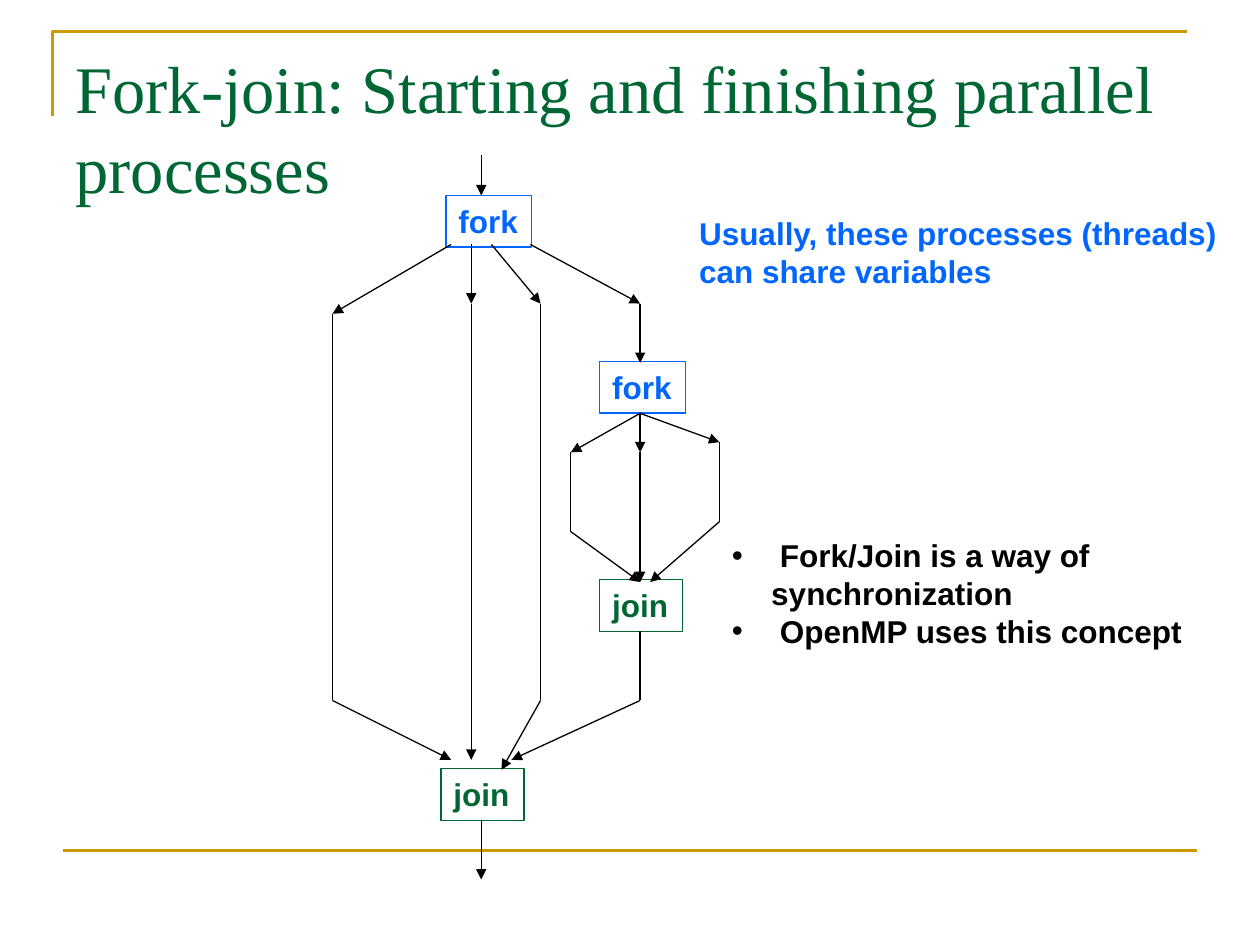
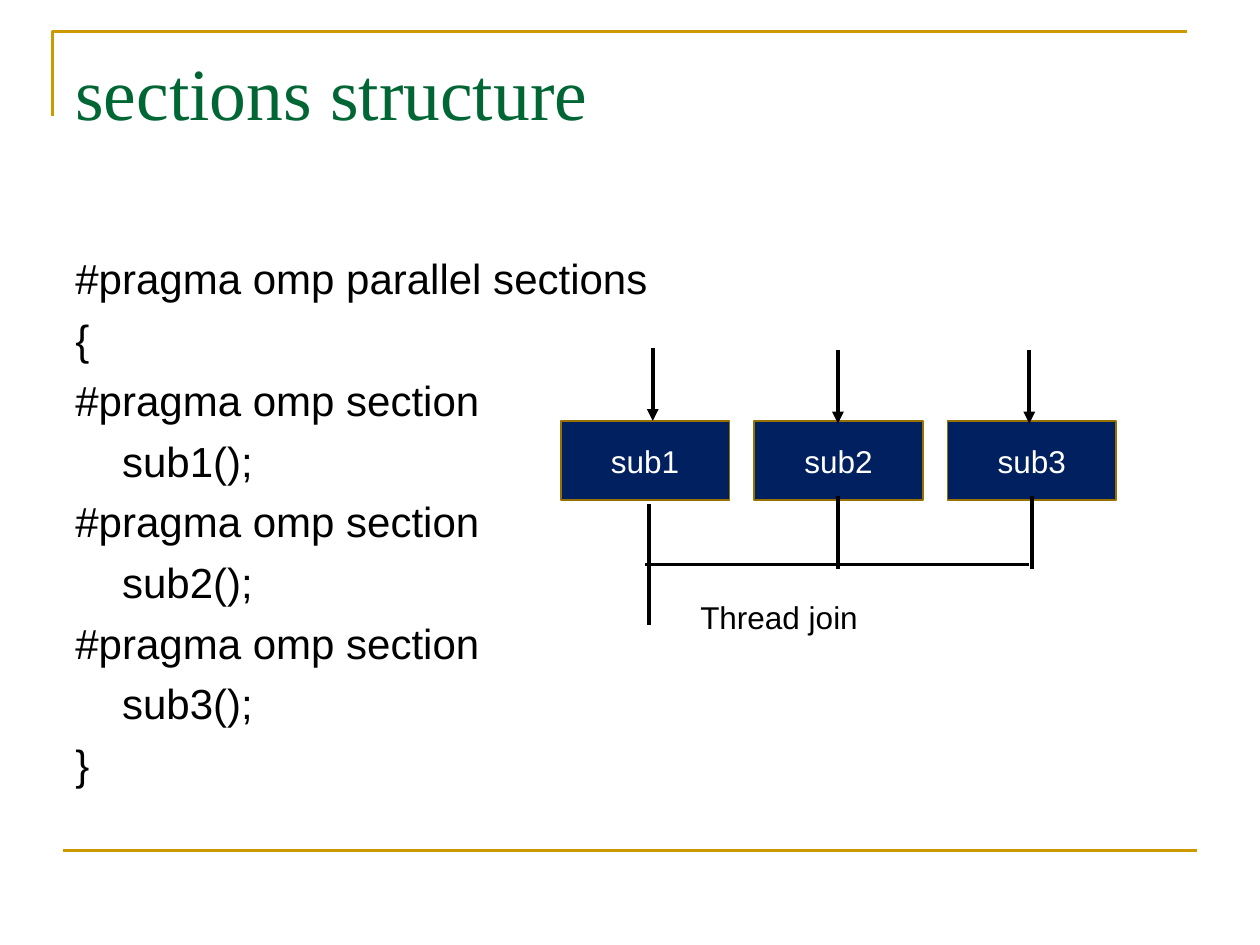
from lxml.etree import SubElement
from pptx import Presentation
from pptx.dml.color import RGBColor
from pptx.enum.shapes import MSO_CONNECTOR, MSO_SHAPE
from pptx.enum.text import MSO_ANCHOR, PP_ALIGN
from pptx.oxml.ns import qn
from pptx.util import Pt

GOLD, GREEN, BLUE, BLACK = "CC9900", "006633", "0066FF", "000000"
NAVY, BRONZE, WHITE = "002060", "977100", "FFFFFF"
BOLD = {"name": "Arial", "size": Pt(18), "bold": True}
PLAIN = {"name": "Arial", "size": Pt(18)}
CODE = {"name": "Arial", "size": Pt(24)}


def add_line(page, start, end, color=BLACK, width=0.75, arrow=False):
    line = page.shapes.add_connector(
        MSO_CONNECTOR.STRAIGHT, *(Pt(value) for value in (*start, *end)))
    line.line.color.rgb = RGBColor.from_string(color)
    line.line.width = Pt(width)
    if arrow:
        SubElement(line.line._get_or_add_ln(), qn("a:tailEnd"), type="triangle")
    SubElement(line._element.spPr, qn("a:effectLst"))


def add_text(page, area, lines, font, color, wrap=True, fill=None, border=None,
             border_width=0.75, align=PP_ALIGN.LEFT, anchor=MSO_ANCHOR.TOP):
    area = [Pt(value) for value in area]
    if border:
        box = page.shapes.add_shape(MSO_SHAPE.RECTANGLE, *area)
        box.shadow.inherit = False
        box.line.color.rgb = RGBColor.from_string(border)
        box.line.width = Pt(border_width)
        if fill:
            box.fill.solid()
            box.fill.fore_color.rgb = RGBColor.from_string(fill)
        else:
            box.fill.background()
    else:
        box = page.shapes.add_textbox(*area)
    frame = box.text_frame
    frame.word_wrap = wrap
    frame.vertical_anchor = anchor
    for number, line in enumerate(lines):
        para = frame.paragraphs[0] if number == 0 else frame.add_paragraph()
        para.alignment = align
        span = para.add_run()
        span.text = line
        for name, value in font.items():
            setattr(span.font, name, value)
        span.font.color.rgb = RGBColor.from_string(color)
    return frame


deck = Presentation()
deck.slide_width, deck.slide_height = Pt(720), Pt(540)

# Shared frame and titles
titles = [("Fork-join: Starting and finishing parallel processes", 38),
          ("sections structure", 42)]
pages = []
for title, size in titles:
    page = deck.slides.add_slide(deck.slide_layouts[6])
    outline = page.shapes.build_freeform(Pt(30.2), Pt(66.2))
    outline.add_line_segments([(Pt(30.2), Pt(18)), (Pt(678.2), Pt(18))], close=False)
    corner = outline.convert_to_shape()
    corner.shadow.inherit = False
    corner.fill.background()
    corner.line.color.rgb = RGBColor.from_string(GOLD)
    corner.line.width = Pt(1.5)
    add_line(page, (36, 486), (684, 486), GOLD, 1.5)
    add_text(page, (36, 23.5, 648, 90), [title],
             {"name": "Times New Roman", "size": Pt(size)}, GREEN)
    pages.append(page)
fork_page, sections_page = pages

# Fork and join boxes
for word, color, left, top, width in [
        ("fork", BLUE, 254.9, 111.6, 49), ("fork", BLUE, 342.7, 206.6, 49),
        ("join", GREEN, 342.7, 331.2, 47.5), ("join", GREEN, 252, 439.2, 47.5)]:
    add_text(fork_page, (left, top, width, 29.5), [word], BOLD, color,
             wrap=False, border=color)

# Threads: arrow out of the fork, plain run, arrow into the join
threads = [
    [(257.8, 139.7), (190, 179.3), (190, 400.3), (257.8, 434.2)],
    [(269.3, 139.7), (269.3, 173.5), (269.3, 400.3), (269.3, 434.2)],
    [(280.8, 139.7), (308.9, 173.5), (308.9, 400.3), (286.6, 439.9)],
    [(365.8, 236.2), (326.2, 258.5), (326.2, 303.8), (365.8, 332.6)],
    [(365.8, 236.2), (365.8, 258.5), (365.8, 303.8), (365.8, 332.6)],
    [(365.8, 236.2), (411.1, 252.7), (411.1, 298.1), (371.5, 332.6)],
]
for thread in threads:
    for step, (start, end) in enumerate(zip(thread, thread[1:])):
        add_line(fork_page, start, end, arrow=step != 1)

# Entry, exit and the branch that forks again
for start, end in [((275, 88.6), (275, 111.6)), ((275, 468.7), (275, 502.6)),
                   ((303.1, 139.7), (365.8, 173.5)),
                   ((365.8, 173.5), (365.8, 207.4)),
                   ((365.8, 400.3), (292.3, 434.2))]:
    add_line(fork_page, start, end, arrow=True)
add_line(fork_page, (365.8, 360.7), (365.8, 400.3))

# Remarks
add_text(fork_page, (392.4, 118.8, 311.8, 50.4),
         ["Usually, these processes (threads)", "can share variables"],
         BOLD, BLUE, wrap=False)
remarks = add_text(fork_page, (411.1, 303, 306, 72),
                   [" Fork/Join is a way of synchronization",
                    " OpenMP uses this concept"], BOLD, BLACK)
for para in remarks.paragraphs:
    settings = para._p.get_or_add_pPr()
    settings.set("marL", str(Pt(22.5)))
    settings.set("indent", str(-Pt(22.5)))
    SubElement(settings, qn("a:buFont"), typeface="Arial")
    SubElement(settings, qn("a:buChar"), char="•")

# Code listing, with the calls indented
calls = ["sub1", "sub2", "sub3"]
code = ["#pragma omp parallel sections", "{"]
for call in calls:
    code += ["#pragma omp section", f"{call}();"]
listing = add_text(sections_page, (36, 141, 363.6, 317.5), code + ["}"], CODE, BLACK)
for para in listing.paragraphs:
    para.space_after = Pt(5.9)
    if para.text.startswith("sub"):
        para._p.get_or_add_pPr().set("marL", str(Pt(26.7)))

# Section boxes
for number, call in enumerate(calls):
    add_text(sections_page, (320.4 + 110.5 * number, 240.5, 96.5, 45.4), [call],
             PLAIN, WHITE, fill=NAVY, border=BRONZE, border_width=1,
             align=PP_ALIGN.CENTER, anchor=MSO_ANCHOR.MIDDLE)

# Arrows in, stems out and the joining bar
for x, top in [(373, 198.7), (478.8, 200.2), (588.2, 200.2)]:
    add_line(sections_page, (x, top), (x, top + 41.8), width=2.25, arrow=True)
for x, top, bottom in [(370.8, 288, 357.1), (478.8, 283.7, 325.4),
                       (589.7, 283.7, 325.4)]:
    add_line(sections_page, (x, top), (x, bottom), width=2.25)
add_line(sections_page, (588.2, 322.6), (368.6, 322.6), width=2.25)
add_text(sections_page, (393.1, 338.4, 105.1, 28.8), ["Thread join"], PLAIN, BLACK,
         wrap=False)

deck.save("out.pptx")
